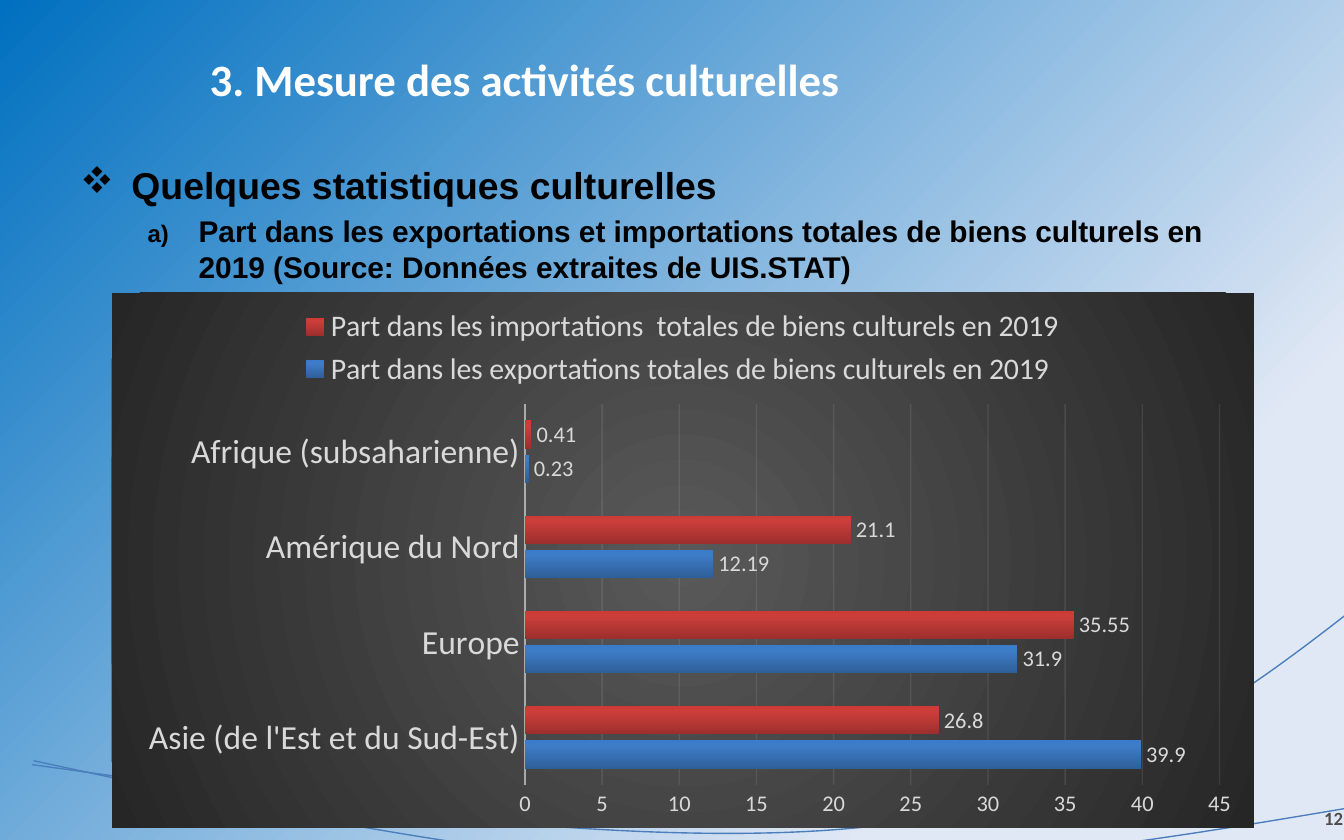
from dataclasses import dataclass
from typing import Any, Optional

import pptx
import pptx.chart.data
import pptx.dml.color
import pptx.enum.chart
import pptx.enum.text
import pptx.oxml
import pptx.oxml.ns
import pptx.util
from lxml import etree

Inches = pptx.util.Inches
Pt = pptx.util.Pt
qn = pptx.oxml.ns.qn
Point = tuple[float, float]


@dataclass(frozen=True)
class Stop:
    position: int
    color: str
    opacity: int = 100


@dataclass(frozen=True)
class Series:
    name: str
    values: tuple[float, ...]
    stops: tuple[Stop, ...]


@dataclass(frozen=True)
class Heading:
    text: str
    size: int
    indent: float
    space_before: float
    bullet: tuple[str, ...]


# Each wave: a start point, then three points per cubic curve
WAVES: list[list[Point]] = [
    [(0.24, 5.69), (2.61, 6.02), (4.98, 6.35), (6.64, 6.13),
     (8.31, 5.92), (9.28, 5.15), (10.25, 4.39)],
    [(0.25, 5.66), (2.01, 6.04), (3.76, 6.41), (5.43, 6.46),
     (7.1, 6.51), (8.69, 6.24), (10.28, 5.97)],
]
HEADINGS = [
    Heading("Quelques statistiques culturelles", 20, 0.38, 0,
            ('<a:buFont {ns} typeface="Wingdings" charset="2"/>',
             '<a:buChar {ns} char="v"/>')),
    Heading("Part dans les exportations et importations totales de biens culturels "
            "en 2019 (Source: Données extraites de UIS.STAT)", 16, 0.88, 3,
            ('<a:buSzPct {ns} val="80000"/>',
             '<a:buAutoNum {ns} type="alphaLcParenR"/>')),
]
REGIONS = ["Asie (de l'Est et du Sud-Est)", "Europe", "Amérique du Nord",
           "Afrique (subsaharienne)"]
SERIES = [
    Series("Part dans les exportations totales de biens culturels en 2019",
           (39.9, 31.9, 12.19, 0.23),
           (Stop(0, "2F5F99"), Stop(80, "3D7CC7"), Stop(100, "3A7CCB"))),
    Series("Part dans les importations  totales de biens culturels en 2019",
           (26.8, 35.55, 21.1, 0.41),
           (Stop(0, "9C2F2D"), Stop(80, "CB3E3A"), Stop(100, "CE3B37"))),
]


def rgb(color: str) -> pptx.dml.color.RGBColor:
    return pptx.dml.color.RGBColor.from_string(color)


def set_font(font: Any, size: float, color: str, name: str = "Calibri",
             bold: bool = False) -> None:
    for key, value in {"size": Pt(size), "name": name, "bold": bold}.items():
        setattr(font, key, value)
    font.color.rgb = rgb(color)


def set_line(line: Any, color: str, width: float, opacity: int = 100) -> None:
    line.color.rgb = rgb(color)
    line.width = Pt(width)
    if opacity < 100:
        for element in line._ln.iter(qn("a:srgbClr")):
            etree.SubElement(element, qn("a:alpha"), val=str(opacity * 1000))


def gradient(stops: tuple[Stop, ...], angle: Optional[int] = None,
             focus: str = "") -> Any:
    """Linear gradient with an angle, or circular one around a focus rectangle."""
    colors = "".join(
        f'<a:gs pos="{stop.position * 1000}"><a:srgbClr val="{stop.color}">'
        f'<a:alpha val="{stop.opacity * 1000}"/></a:srgbClr></a:gs>' for stop in stops)
    shade = (f'<a:path path="circle"><a:fillToRect {focus}/></a:path>'
             if angle is None else f'<a:lin ang="{angle * 60000}" scaled="0"/>')
    return pptx.oxml.parse_xml(
        f'<a:gradFill {pptx.oxml.ns.nsdecls("a")} rotWithShape="1">'
        f'<a:gsLst>{colors}</a:gsLst>{shade}</a:gradFill>')


def replace_fill(properties: Any, fill: Any) -> None:
    solid = properties.find(qn("a:solidFill"))
    properties.replace(solid, fill)


def add_wave(slide: Any, points: list[Point]) -> None:
    start, *others = [(Inches(x), Inches(y)) for x, y in points]
    builder = slide.shapes.build_freeform(*start)
    builder.add_line_segments(others, close=False)
    shape = builder.convert_to_shape()
    # Turn every three straight segments into one cubic curve
    segments = list(shape._element.iter(qn("a:lnTo")))
    for first in range(0, len(segments), 3):
        curve = etree.Element(qn("a:cubicBezTo"))
        segments[first].addprevious(curve)
        for segment in segments[first:first + 3]:
            curve.append(segment[0])
            segment.getparent().remove(segment)
    shape.shadow.inherit = False
    shape.fill.background()
    set_line(shape.line, "4B7EBC", 0.75)


def add_headings(slide: Any) -> None:
    box = slide.shapes.add_textbox(Inches(0.5), Inches(1.16), Inches(9), Inches(4.84))
    frame = box.text_frame
    frame.word_wrap = True
    namespace = pptx.oxml.ns.nsdecls("a")
    for index, heading in enumerate(HEADINGS):
        paragraph = frame.add_paragraph() if index else frame.paragraphs[0]
        paragraph.level = index
        paragraph.space_before = Pt(heading.space_before)
        properties = paragraph._p.get_or_add_pPr()
        properties.set("marL", str(Inches(heading.indent)))
        properties.set("indent", str(Inches(-0.38)))
        for element in heading.bullet:
            properties.append(pptx.oxml.parse_xml(element.format(ns=namespace)))
        run = paragraph.add_run()
        run.text = heading.text
        set_font(run.font, heading.size, "000000", "Arial", True)


def add_page_number(slide: Any) -> None:
    box = slide.shapes.add_textbox(Inches(9.1), Inches(5.92), Inches(0.99), Inches(0.33))
    frame = box.text_frame
    frame.word_wrap = True
    frame.vertical_anchor = pptx.enum.text.MSO_ANCHOR.MIDDLE
    paragraph = frame.paragraphs[0]
    paragraph.alignment = pptx.enum.text.PP_ALIGN.RIGHT
    run = paragraph.add_run()
    run.text = "12"
    set_font(run.font, 10, "4D4D4D", bold=True)


def set_plot_area(chart: Any, x: float, y: float, w: float, h: float) -> None:
    """Place the inner plot area, in fractions of the chart."""
    area = chart.element.find(".//" + qn("c:plotArea"))
    for old in area.findall(qn("c:layout")):
        area.remove(old)
    values = {"layoutTarget": "inner", "xMode": "edge", "yMode": "edge",
              "x": x, "y": y, "w": w, "h": h}
    layout = etree.Element(qn("c:layout"))
    manual = etree.SubElement(layout, qn("c:manualLayout"))
    for key, value in values.items():
        etree.SubElement(manual, qn(f"c:{key}"), val=str(value))
    area.insert(0, layout)


def add_trade_chart(slide: Any) -> None:
    data = pptx.chart.data.CategoryChartData()
    data.categories = REGIONS
    for series in SERIES:
        data.add_series(series.name, series.values)
    chart = slide.shapes.add_chart(
        pptx.enum.chart.XL_CHART_TYPE.BAR_CLUSTERED,
        Inches(0.83), Inches(2.18), Inches(8.5), Inches(3.98), data).chart
    set_font(chart.font, 10, "000000")
    chart.has_title = False
    chart.has_legend = True
    chart.legend.position = pptx.enum.chart.XL_LEGEND_POSITION.TOP
    chart.legend.include_in_layout = False
    set_font(chart.legend.font, 16, "D9D9D9")
    set_plot_area(chart, 0.362, 0.208, 0.608, 0.712)

    # Dark chart background
    area = pptx.oxml.parse_xml(f'<c:spPr {pptx.oxml.ns.nsdecls("c", "a")}>'
                               '<a:ln><a:noFill/></a:ln></c:spPr>')
    area.insert(0, gradient((Stop(0, "595959"), Stop(100, "262626")),
                            focus='l="50000" t="50000" r="50000" b="50000"'))
    chart.element.find(qn("c:chart")).addnext(area)

    # Axes
    for axis, size in ((chart.category_axis, 18), (chart.value_axis, 12)):
        axis.major_tick_mark = pptx.enum.chart.XL_TICK_MARK.NONE
        axis.minor_tick_mark = pptx.enum.chart.XL_TICK_MARK.NONE
        set_font(axis.tick_labels.font, size, "D9D9D9")
    set_line(chart.category_axis.format.line, "F2F2F2", 1, 54)
    for key, value in {"minimum_scale": 0, "maximum_scale": 45, "major_unit": 5,
                       "has_major_gridlines": True}.items():
        setattr(chart.value_axis, key, value)
    chart.value_axis.format.line.fill.background()
    set_line(chart.value_axis.major_gridlines.format.line, "F2F2F2", 0.75, 10)

    # Bars and value labels
    plot = chart.plots[0]
    for key, value in {"gap_width": 115, "overlap": -20,
                       "vary_by_categories": False}.items():
        setattr(plot, key, value)
    for bars, series in zip(plot.series, SERIES):
        bars.format.fill.solid()
        replace_fill(bars._element.find(qn("c:spPr")), gradient(series.stops, 270))
        labels = bars.data_labels
        labels.show_value = True
        labels.position = pptx.enum.chart.XL_LABEL_POSITION.OUTSIDE_END
        set_font(labels.font, 12, "D9D9D9")


def main() -> None:
    presentation = pptx.Presentation()
    presentation.slide_width, presentation.slide_height = Inches(10), Inches(6.25)
    slide = presentation.slides.add_slide(presentation.slide_layouts[5])
    # Background and waves
    slide.background.fill.solid()
    replace_fill(slide.element.find(".//" + qn("p:bgPr")),
                 gradient((Stop(22, "E1E8F5", 67), Stop(100, "0070C0", 87)),
                          focus='l="100000" t="100000"'))
    for points in WAVES:
        add_wave(slide, points)
    # Title
    title = slide.shapes.title
    for key, value in {"left": 1.46, "top": 0.17, "width": 8.54, "height": 0.83}.items():
        setattr(title, key, Inches(value))
    title.text_frame.text = "3. Mesure des activités culturelles"
    title.text_frame.vertical_anchor = pptx.enum.text.MSO_ANCHOR.MIDDLE
    paragraph = title.text_frame.paragraphs[0]
    paragraph.alignment = pptx.enum.text.PP_ALIGN.LEFT
    set_font(paragraph.runs[0].font, 24, "FFFFFF", bold=True)
    # Content
    add_headings(slide)
    add_page_number(slide)
    add_trade_chart(slide)
    presentation.save("out.pptx")


if __name__ == "__main__":
    main()
